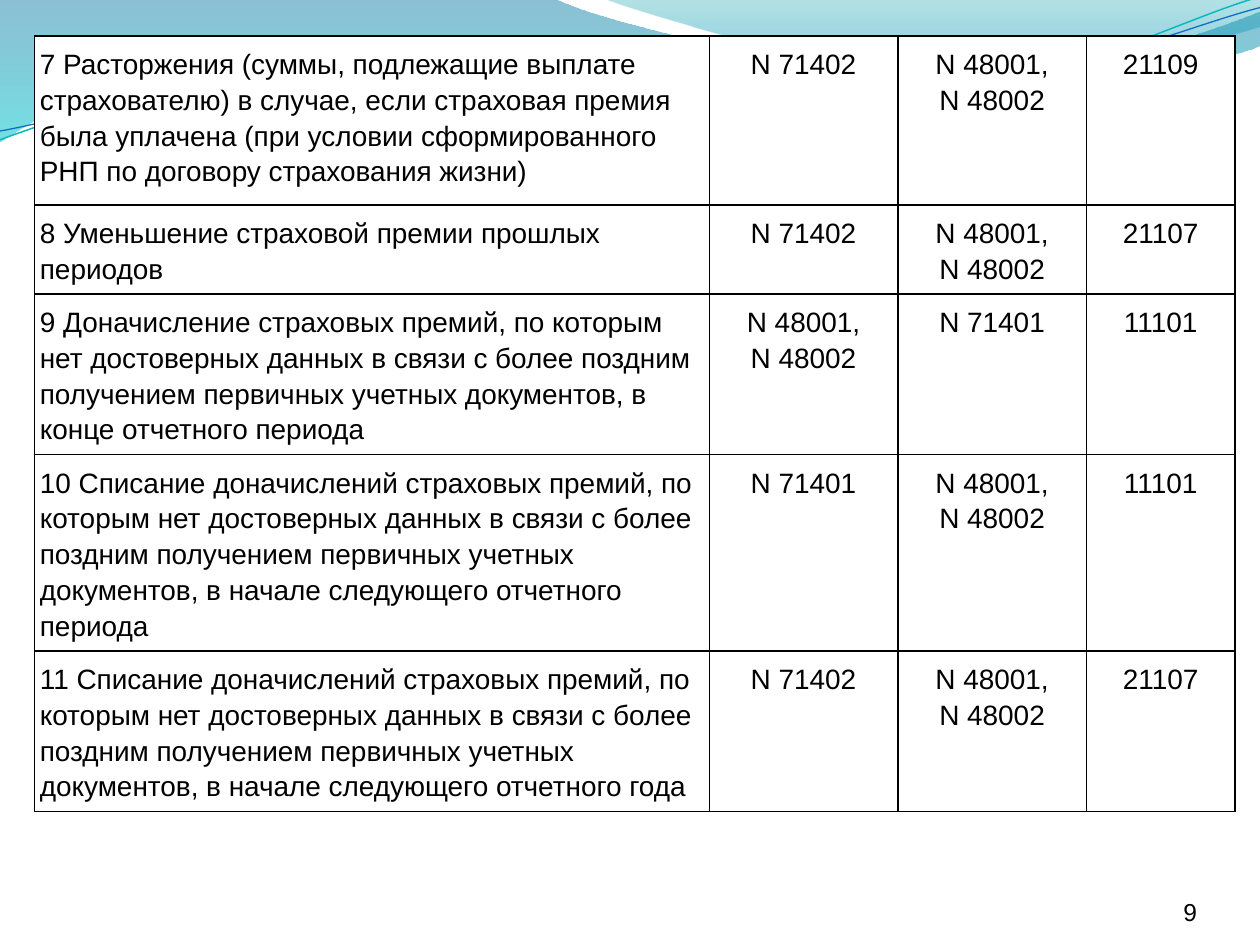
from math import cos, radians, sin

from lxml.etree import SubElement
from pptx import Presentation
from pptx.dml.color import RGBColor
from pptx.enum.text import MSO_ANCHOR, PP_ALIGN
from pptx.oxml import parse_xml
from pptx.oxml.ns import nsdecls, qn
from pptx.util import Pt

COLORS = {
    "black": "000000",
    "white": "FFFFFF",
    "deep_blue": "0074A1",
    "cyan": "00C6CF",
    "teal": "00A1A9",
    "sea_blue": "008BBF",
    "line_teal": "0AB8BF",
    "line_blue": "0F6FC6",
}
FONT = "Arial"
CURVE_TILT = -2.7

LARGE_WAVE_FRAME = (-0.72, -0.72, 721.44, 82.08)
LARGE_WAVE = [
    (0, 0), (316.8, -0.72),
    (342.72, 12.24, 478.08, 45.36, 545.76, 45.36),
    (614.16, 45.36, 689.76, 18.72, 720, 6.48),
    (720.72, 25.92),
    (707.76, 31.68, 626.4, 54.72, 537.12, 54),
    (447.84, 54, 275.04, 20.16, 185.04, 24.48),
    (92.88, 25.92, 33.12, 59.76, -0.72, 81.36),
]
SMALL_WAVE_FRAME = (344.88, -0.72, 375.12, 50.4)
SMALL_WAVE = [
    (344.88, -0.72),
    (366.48, 7.92, 491.04, 44.64, 553.68, 46.8),
    (616.32, 49.68, 691.92, 23.04, 720, 15.12),
    (720, 0),
]
TEAL_CURVE_FRAME = (-1.44, 15.84, 721.44, 51.12)
TEAL_CURVE = [
    (0, 79.92),
    (34.56, 66.96, 113.76, 41.04, 199.44, 37.44),
    (284.4, 33.84, 426.96, 64.08, 513.36, 57.6),
    (599.76, 51.12, 675.36, 10.8, 718.56, -1.44),
]
BLUE_CURVE_FRAME = (-1.44, 21.6, 722.16, 41.76)
BLUE_CURVE = [
    (0, 74.88),
    (33.84, 69.12, 118.08, 43.92, 203.76, 40.32),
    (290.16, 36.72, 429.84, 60.48, 516.24, 54),
    (601.92, 48.24, 677.52, 15.12, 720, 4.32),
]

ACCOUNTS = "N 48001,\nN 48002"
LATE_DATA = (
    "страховых премий, по которым нет достоверных данных в связи с более "
    "поздним получением первичных учетных документов, в"
)
ROWS = [
    ("7 Расторжения (суммы, подлежащие выплате страхователю) в случае, если "
     "страховая премия была уплачена (при условии сформированного РНП по "
     "договору страхования жизни)", "N 71402", ACCOUNTS, "21109"),
    ("8 Уменьшение страховой премии прошлых периодов",
     "N 71402", ACCOUNTS, "21107"),
    (f"9 Доначисление {LATE_DATA} конце отчетного периода",
     ACCOUNTS, "N 71401", "11101"),
    (f"10 Списание доначислений {LATE_DATA} начале следующего отчетного периода",
     "N 71401", ACCOUNTS, "11101"),
    (f"11 Списание доначислений {LATE_DATA} начале следующего отчетного года",
     "N 71402", ACCOUNTS, "21107"),
]
COLUMN_WIDTHS = [385.5, 107.75, 107.75, 85]
ROW_HEIGHTS = [96.5, 46, 79, 96.5, 79]


def color(name):
    return RGBColor.from_string(COLORS[name])


def turn(points, center, degrees):
    cosine, sine = cos(radians(degrees)), sin(radians(degrees))
    offsets = [(x - center[0], y - center[1]) for x, y in points]
    return [(center[0] + x * cosine - y * sine, center[1] + x * sine + y * cosine)
            for x, y in offsets]


def add_outline(slide, segments, frame, close, tilt=0):
    left, top, width, height = frame
    center = (left + width / 2, top + height / 2)
    steps = [turn(zip(step[::2], step[1::2]), center, -tilt) for step in segments]
    start, *anchors = [(Pt(x), Pt(y)) for x, y in (step[-1] for step in steps)]
    builder = slide.shapes.build_freeform(*start)
    builder.add_line_segments(anchors, close=close)
    shape = builder.convert_to_shape()
    shape.left, shape.top, shape.width, shape.height = map(Pt, frame)
    shape.rotation = tilt % 360
    shape.shadow.inherit = False
    shape.fill.background()
    outline = next(shape.element.iter(qn("a:path")))
    outline.set("w", str(Pt(width)))
    outline.set("h", str(Pt(height)))
    for command, step in zip(list(outline), steps):
        if len(step) == 3:
            curve = SubElement(outline, qn("a:cubicBezTo"))
            outline.replace(command, curve)
            command = curve
        for point in list(command):
            command.remove(point)
        for x, y in step:
            SubElement(command, qn("a:pt"), x=str(Pt(x - left)), y=str(Pt(y - top)))
    return shape


def add_wave(slide, segments, frame, stops):
    shape = add_outline(slide, segments, frame, True)
    shape.line.fill.background()
    stop_xml = "".join(
        f'<a:gs pos="{position * 1000}"><a:srgbClr val="{COLORS[name]}">'
        f'<a:alpha val="{opacity * 1000}"/></a:srgbClr></a:gs>'
        for position, name, opacity in stops)
    gradient = parse_xml(
        f'<a:gradFill {nsdecls("a")} rotWithShape="1"><a:gsLst>{stop_xml}</a:gsLst>'
        '<a:lin ang="5400000" scaled="0"/></a:gradFill>')
    properties = shape.element.spPr
    properties.replace(properties.find(qn("a:noFill")), gradient)


def add_curve(slide, segments, frame, color_name, width):
    shape = add_outline(slide, segments, frame, False, CURVE_TILT)
    shape.line.color.rgb = color(color_name)
    shape.line.width = Pt(width)


def format_text(text_frame, size, alignment, line_spacing=None):
    for paragraph in text_frame.paragraphs:
        paragraph.alignment = alignment
        paragraph.line_spacing = line_spacing
        for run in paragraph.runs:
            run.font.size = Pt(size)
            run.font.name = FONT
            run.font.color.rgb = color("black")


def add_borders(cell):
    properties = cell._tc.get_or_add_tcPr()
    for index, side in enumerate(("lnL", "lnR", "lnT", "lnB")):
        line = SubElement(properties, qn(f"a:{side}"), w=str(Pt(1)))
        fill = SubElement(line, qn("a:solidFill"))
        SubElement(fill, qn("a:srgbClr"), val=COLORS["black"])
        properties.insert(index, line)


def fill_cell(cell, text, alignment):
    cell.text_frame.text = text
    cell.margin_left = cell.margin_right = Pt(3)
    cell.margin_top = cell.margin_bottom = Pt(5)
    cell.fill.solid()
    cell.fill.fore_color.rgb = color("white")
    format_text(cell.text_frame, 16, alignment, 1.15)
    add_borders(cell)


def add_account_table(slide):
    frame = slide.shapes.add_table(
        len(ROWS), len(COLUMN_WIDTHS), Pt(19.8), Pt(20.6),
        Pt(sum(COLUMN_WIDTHS)), Pt(sum(ROW_HEIGHTS)))
    table = frame.table
    for column, width in zip(table.columns, COLUMN_WIDTHS):
        column.width = Pt(width)
    for row, height, texts in zip(table.rows, ROW_HEIGHTS, ROWS):
        row.height = Pt(height)
        for index, (cell, text) in enumerate(zip(row.cells, texts)):
            fill_cell(cell, text, PP_ALIGN.CENTER if index else PP_ALIGN.LEFT)


def add_page_number(slide, text):
    box = slide.shapes.add_textbox(Pt(624), Pt(500.5), Pt(60), Pt(29))
    text_frame = box.text_frame
    text_frame.text = text
    text_frame.word_wrap = True
    text_frame.vertical_anchor = MSO_ANCHOR.BOTTOM
    text_frame.margin_left = text_frame.margin_right = 0
    text_frame.margin_top = text_frame.margin_bottom = 0
    format_text(text_frame, 14, PP_ALIGN.RIGHT)


def main():
    presentation = Presentation()
    presentation.slide_width = Pt(720)
    presentation.slide_height = Pt(540)
    slide = presentation.slides.add_slide(presentation.slide_layouts[6])
    slide.background.fill.solid()
    slide.background.fill.fore_color.rgb = color("white")
    add_wave(slide, LARGE_WAVE, LARGE_WAVE_FRAME,
             [(0, "deep_blue", 45), (100, "cyan", 55)])
    add_wave(slide, SMALL_WAVE, SMALL_WAVE_FRAME,
             [(0, "teal", 30), (80, "sea_blue", 45)])
    add_curve(slide, TEAL_CURVE, TEAL_CURVE_FRAME, "line_teal", 0.85)
    add_curve(slide, BLUE_CURVE, BLUE_CURVE_FRAME, "line_blue", 0.75)
    add_account_table(slide)
    add_page_number(slide, "9")
    presentation.save("out.pptx")


if __name__ == "__main__":
    main()
